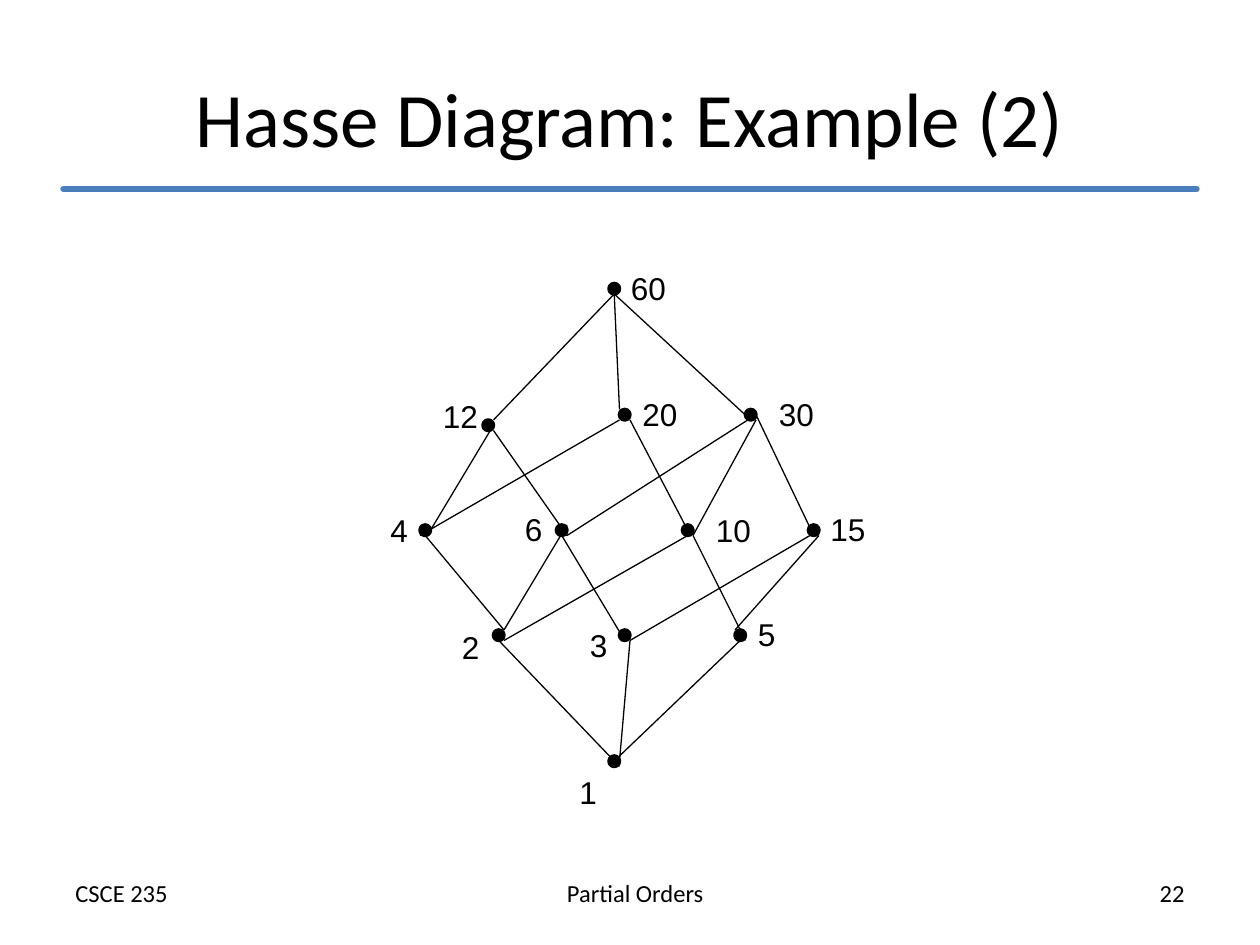
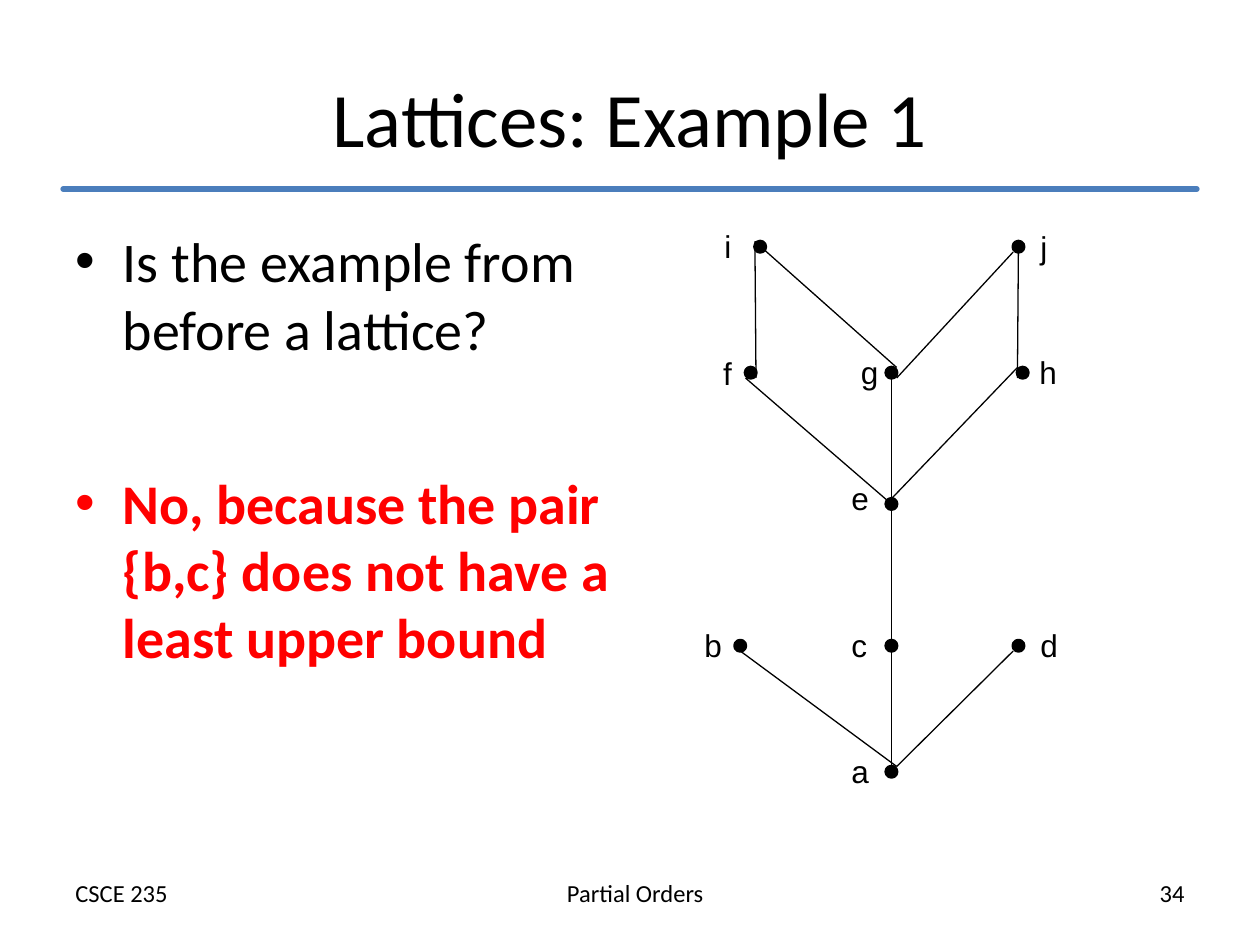
from typing import NamedTuple

from pptx import Presentation
from pptx.dml.color import RGBColor
from pptx.enum.shapes import MSO_CONNECTOR, MSO_SHAPE
from pptx.enum.text import MSO_ANCHOR, MSO_AUTO_SIZE, PP_ALIGN
from pptx.oxml.ns import qn
from pptx.util import Inches, Length, Pt

# Shared look
BLACK = RGBColor(0x00, 0x00, 0x00)
RED = RGBColor(0xFF, 0x00, 0x00)
RULE_BLUE = RGBColor(0x4B, 0x7E, 0xBC)
TEXT_FONT = "Calibri"
LABEL_FONT = "Arial"
TITLE_ONLY, TWO_CONTENT = 5, 3

# The grid has 12 cells to the inch: 120 columns and 90 rows
COLUMNS, ROWS = 120, 90
MARGIN = 6
CONTENT_WIDTH = COLUMNS - 2 * MARGIN
FOOTER_WIDTH = 35
LABEL_PADDING, LABEL_HEIGHT = 2.4, 4.8
LETTER_WIDTHS = {"i": 0.7, "j": 0.7, "f": 0.85, "c": 1.5}
DIGIT_WIDTH = 1.67

# Points of a one-cell dot, as shares of its width and height
ANCHORS = {
    "NW": (0, 0), "N": (0.5, 0), "NE": (1, 0),
    "C": (0.5, 0.5), "E": (1, 0.5),
    "SW": (0, 1), "S": (0.5, 1), "SE": (1, 1),
}


class Node(NamedTuple):
    name: str
    column: float
    row: float
    label_column: float
    label_row: float


class Edge(NamedTuple):
    lower: str
    lower_anchor: str
    upper: str
    upper_anchor: str


class Answer(NamedTuple):
    text: str
    row: float
    color: RGBColor
    bold: bool


DIVISOR_NODES = [
    Node("1", 58, 72, 54, 73),
    Node("2", 47, 60, 42.8, 59.2),
    Node("3", 59, 60, 55, 59),
    Node("5", 70, 60, 71, 58),
    Node("4", 40, 50, 36, 48.1),
    Node("6", 53, 50, 48.8, 48),
    Node("10", 65, 50, 67, 48.1),
    Node("15", 77, 50, 77.9, 48),
    Node("12", 46, 40, 41, 37.2),
    Node("20", 59, 39, 60, 37),
    Node("30", 71, 39, 73, 37),
    Node("60", 58, 27, 58.9, 25),
]
DIVISOR_EDGES = [
    Edge("1", "SE", "2", "S"), Edge("1", "E", "3", "SE"), Edge("1", "NE", "5", "S"),
    Edge("2", "NE", "4", "S"), Edge("2", "NE", "6", "NE"), Edge("2", "SE", "10", "S"),
    Edge("3", "S", "6", "S"), Edge("3", "SE", "15", "E"),
    Edge("5", "SE", "10", "SE"), Edge("5", "NW", "15", "SE"),
    Edge("4", "E", "12", "E"), Edge("4", "SW", "20", "SW"),
    Edge("6", "SE", "12", "SE"), Edge("6", "SE", "30", "E"),
    Edge("10", "C", "20", "SE"), Edge("10", "SE", "30", "SE"),
    Edge("15", "S", "30", "E"),
    Edge("12", "NE", "60", "S"), Edge("20", "NW", "60", "S"), Edge("30", "S", "60", "S"),
]

LETTER_NODES = [
    Node("a", 84.4, 73, 79.9, 71),
    Node("b", 70, 61, 65.9, 59),
    Node("c", 84.4, 61, 79.9, 59),
    Node("d", 96.5, 61, 97.9, 59),
    Node("e", 84.4, 47.5, 79.9, 45),
    Node("f", 71, 35, 67.7, 33.1),
    Node("g", 84.4, 35, 80.8, 33),
    Node("h", 96.9, 35, 97.8, 33),
    Node("i", 71.9, 23, 67.8, 21),
    Node("j", 96.5, 23, 97.9, 21.1),
]
LETTER_EDGES = [
    Edge("a", "NE", "b", "S"), Edge("a", "N", "c", "N"), Edge("a", "NE", "d", "SW"),
    Edge("c", "N", "e", "C"),
    Edge("e", "C", "f", "SW"), Edge("e", "S", "g", "S"), Edge("e", "N", "h", "NW"),
    Edge("f", "SE", "i", "NW"), Edge("g", "NE", "i", "NW"),
    Edge("g", "SE", "j", "SW"), Edge("h", "SW", "j", "N"),
]

LATTICE_ANSWERS = [
    Answer("Is the example from before a lattice?", 21, BLACK, False),
    Answer("No, because the pair {b,c} does not have a least upper bound", 44, RED, True),
]


def cells(count: float) -> Length:
    return Inches(count / 12)


def place(shape, column: float, row: float, width: float, height: float) -> None:
    shape.left, shape.top = cells(column), cells(row)
    shape.width, shape.height = cells(width), cells(height)


def write(shape, text: str, *, size: float, font: str = TEXT_FONT, color: RGBColor = BLACK,
          bold: bool = False, align: PP_ALIGN = PP_ALIGN.LEFT, wrap: bool = True,
          fit: MSO_AUTO_SIZE = MSO_AUTO_SIZE.NONE) -> None:
    frame = shape.text_frame
    frame.text = text
    frame.word_wrap = wrap
    frame.auto_size = fit
    paragraph = frame.paragraphs[0]
    paragraph.alignment = align
    run_font = paragraph.runs[0].font
    run_font.name, run_font.size, run_font.bold = font, Pt(size), bold
    run_font.color.rgb = color


def add_text(slide, text: str, column: float, row: float, width: float, height: float,
             **text_format) -> None:
    box = slide.shapes.add_textbox(cells(column), cells(row), cells(width), cells(height))
    write(box, text, fit=MSO_AUTO_SIZE.SHAPE_TO_FIT_TEXT, **text_format)


def add_line(slide, start: tuple[float, float], end: tuple[float, float], *,
             color: RGBColor = BLACK, weight: float = 0.75, cap: str = "flat") -> None:
    line = slide.shapes.add_connector(
        MSO_CONNECTOR.STRAIGHT, *(cells(value) for value in (*start, *end)))
    line.line.color.rgb = color
    line.line.width = Pt(weight)
    properties = line._element.spPr
    properties.find(qn("a:ln")).set("cap", cap)
    properties.append(properties.makeelement(qn("a:effectLst"), {}))


def add_dot(slide, node: Node) -> None:
    dot = slide.shapes.add_shape(
        MSO_SHAPE.OVAL, cells(node.column), cells(node.row), cells(1), cells(1))
    dot.shadow.inherit = False
    dot.fill.solid()
    dot.fill.fore_color.rgb = BLACK
    dot.line.color.rgb = BLACK
    dot.line.width = Pt(2)


def anchor_point(node: Node, anchor: str) -> tuple[float, float]:
    across, down = ANCHORS[anchor]
    return node.column + across, node.row + down


def draw_hasse_diagram(slide, nodes: list[Node], edges: list[Edge]) -> None:
    by_name = {node.name: node for node in nodes}
    for edge in edges:
        add_line(slide, anchor_point(by_name[edge.lower], edge.lower_anchor),
                 anchor_point(by_name[edge.upper], edge.upper_anchor))
    for node in nodes:
        add_dot(slide, node)
        width = LABEL_PADDING + sum(LETTER_WIDTHS.get(sign, DIGIT_WIDTH) for sign in node.name)
        add_text(slide, node.name, node.label_column, node.label_row, width, LABEL_HEIGHT,
                 size=18, font=LABEL_FONT, wrap=False)


def add_framed_slide(presentation, layout_index: int, title: str, page: str):
    """Add a slide with its title, rule and three footers."""
    slide = presentation.slides.add_slide(presentation.slide_layouts[layout_index])
    place(slide.shapes.title, MARGIN, 3.6, CONTENT_WIDTH, 15)
    write(slide.shapes.title, title, size=44, align=PP_ALIGN.CENTER)
    slide.shapes.title.text_frame.vertical_anchor = MSO_ANCHOR.MIDDLE
    add_line(slide, (MARGIN, 18), (COLUMNS - MARGIN, 18),
             color=RULE_BLUE, weight=3, cap="rnd")
    footers = [
        ("CSCE 235", MARGIN, PP_ALIGN.LEFT),
        ("Partial Orders", 43, PP_ALIGN.CENTER),
        (page, COLUMNS - MARGIN - FOOTER_WIDTH, PP_ALIGN.RIGHT),
    ]
    for text, column, align in footers:
        add_text(slide, text, column, 83, FOOTER_WIDTH, 4, size=14, align=align)
    return slide


def main() -> None:
    presentation = Presentation()
    presentation.slide_width, presentation.slide_height = cells(COLUMNS), cells(ROWS)

    # Divisors of 60
    slide = add_framed_slide(presentation, TITLE_ONLY, "Hasse Diagram: Example (2)", "22")
    draw_hasse_diagram(slide, DIVISOR_NODES, DIVISOR_EDGES)

    # Lattice question and answer
    slide = add_framed_slide(presentation, TWO_CONTENT, "Lattices: Example 1", "34")
    for index, answer in enumerate(LATTICE_ANSWERS, start=1):
        body = slide.placeholders[index]
        place(body, MARGIN, answer.row, 55, 18)
        write(body, answer.text, size=32, color=answer.color, bold=answer.bold)
    draw_hasse_diagram(slide, LETTER_NODES, LETTER_EDGES)

    presentation.save("out.pptx")


if __name__ == "__main__":
    main()
